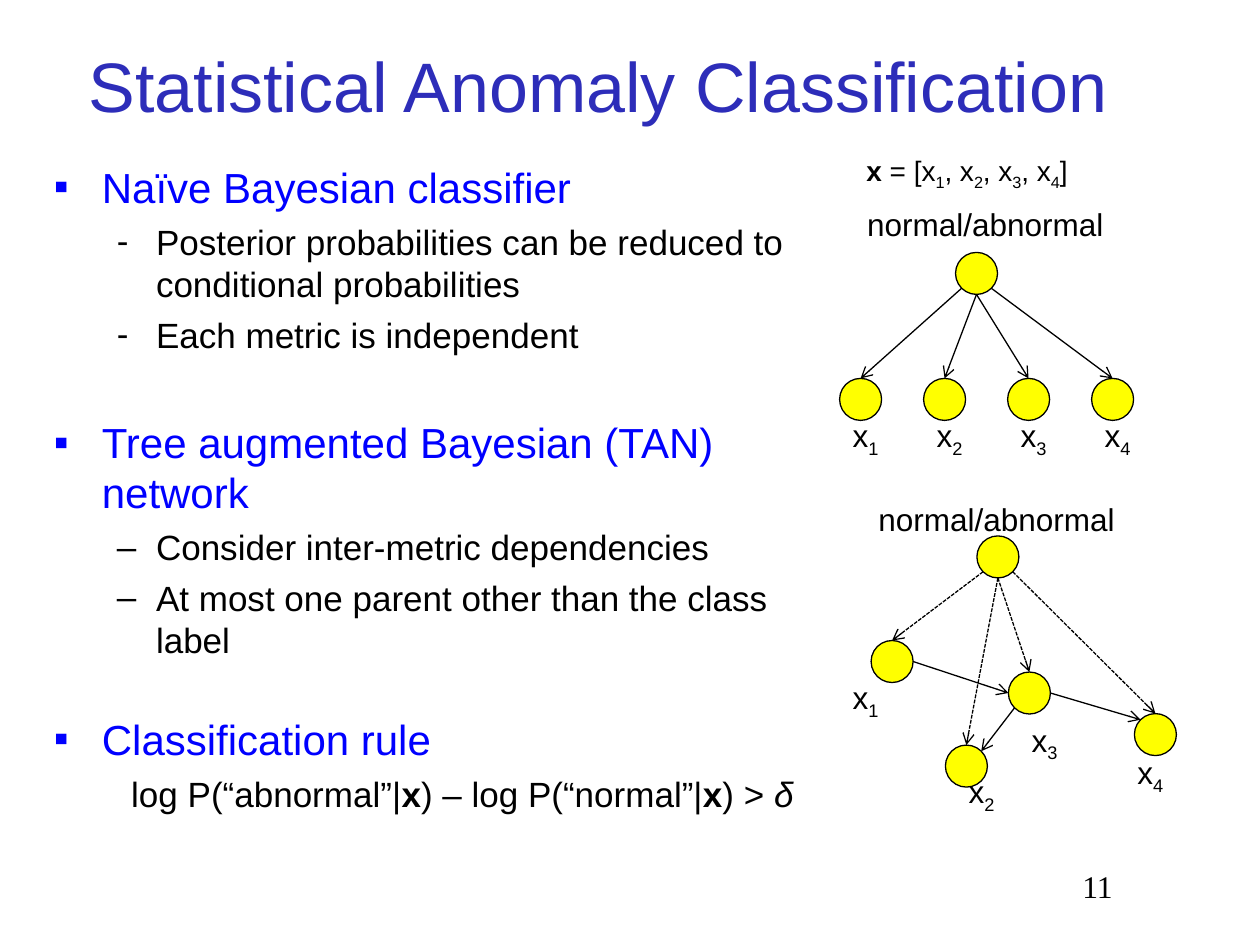
from pptx import Presentation
from pptx.dml.color import RGBColor
from pptx.enum import dml, shapes, text
from pptx.oxml.ns import qn
from pptx.util import Inches, Pt
from lxml import etree

COLORS = {"title": "2D2DB9", "heading": "0000FF", "ink": "000000", "node": "FFFF00"}
RADIUS = 1 / 6
DIAGONAL = 0.5 ** 0.5
PORTS = {
    "top": (0, -1), "bottom": (0, 1), "left": (-1, 0), "right": (1, 0),
    "top left": (-DIAGONAL, -DIAGONAL), "top right": (DIAGONAL, -DIAGONAL),
    "bottom left": (-DIAGONAL, DIAGONAL), "bottom right": (DIAGONAL, DIAGONAL),
}
OUTLINE = [  # level, bullet, wording, points above
    (0, "▪", "Naïve Bayesian classifier", 0),
    (1, "-", "Posterior probabilities can be reduced to conditional probabilities", 5),
    (1, "-", "Each metric is independent", 5),
    (0, "▪", "Tree augmented Bayesian (TAN) network", 35),
    (1, "–", "Consider inter-metric dependencies", 5),
    (1, "–", "At most one parent other than the class label", 5),
    (0, "▪", "Classification rule", 30),
]


def rgb(name):
    return RGBColor.from_string(COLORS[name])


def add_run(paragraph, wording, size, color="ink", font="Arial", style=""):
    """Add one run; style is "", "bold", "italic" or "sub"."""
    run = paragraph.add_run()
    run.text = wording
    run.font.size = Pt(size)
    run.font.name = font
    run.font.color.rgb = rgb(color)
    if style == "bold":
        run.font.bold = True
    elif style == "italic":
        run.font.italic = True
    elif style == "sub":
        run.font._element.set("baseline", "-25000")


def add_frame(slide, left, top, width, height, side_margin=0.1):
    box = slide.shapes.add_textbox(*map(Inches, (left, top, width, height)))
    frame = box.text_frame
    frame.word_wrap = True
    frame.margin_left = frame.margin_right = Inches(side_margin)
    return frame


def set_indent(paragraph, left, first):
    properties = paragraph._p.get_or_add_pPr()
    properties.set("marL", str(Inches(left)))
    properties.set("indent", str(Inches(first)))
    return properties


def add_label(slide, at, runs, size, font="Arial", side_margin=0):
    """Add a centred line of (wording, style) runs."""
    paragraph = add_frame(slide, *at, side_margin).paragraphs[0]
    paragraph.alignment = text.PP_ALIGN.CENTER
    for wording, style in runs:
        add_run(paragraph, wording, size, font=font, style=style)
    return paragraph


def add_title(slide, wording):
    title = slide.shapes.title
    title.left, title.top, title.width, title.height = map(Inches, (0.24, 0.17, 9.01, 1))
    title.text_frame.vertical_anchor = text.MSO_ANCHOR.MIDDLE
    paragraph = title.text_frame.paragraphs[0]
    paragraph.alignment = text.PP_ALIGN.CENTER
    add_run(paragraph, wording, 40, "title")


def add_outline(slide):
    frame = add_frame(slide, 0.33, 0.67, 6.25, 5.42)
    frame.margin_top = Inches(0.61)
    for index, (level, bullet, wording, above) in enumerate(OUTLINE):
        paragraph = frame.add_paragraph() if index else frame.paragraphs[0]
        paragraph.level = level
        paragraph.space_before = Pt(above)
        properties = set_indent(paragraph, *((0.81, -0.31) if level else (0.38, -0.38)))
        etree.SubElement(properties, qn("a:buFont")).set("typeface", "Arial")
        etree.SubElement(properties, qn("a:buChar")).set("char", bullet)
        add_run(paragraph, wording, *((20, "ink") if level else (24, "heading")))


def add_node(slide, center):
    x, y = center
    node = slide.shapes.add_shape(
        shapes.MSO_SHAPE.OVAL, Inches(x - RADIUS), Inches(y - RADIUS),
        Inches(2 * RADIUS), Inches(2 * RADIUS))
    node.shadow.inherit = False
    node.fill.solid()
    node.fill.fore_color.rgb = rgb("node")
    node.line.color.rgb = rgb("ink")
    node.line.width = Pt(0.75)


def add_edge(slide, parent, parent_port, child, child_port, dashed):
    ends = [Inches(coordinate + RADIUS * offset)
            for center, port in ((parent, parent_port), (child, child_port))
            for coordinate, offset in zip(center, PORTS[port])]
    edge = slide.shapes.add_connector(shapes.MSO_CONNECTOR.STRAIGHT, *ends)
    edge.line.color.rgb = rgb("ink")
    edge.line.width = Pt(0.75)
    if dashed:
        edge.line.dash_style = dml.MSO_LINE.SQUARE_DOT
    etree.SubElement(edge.line._get_or_add_ln(), qn("a:tailEnd")).set("type", "arrow")
    etree.SubElement(edge._element.spPr, qn("a:effectLst"))


def add_network(slide, root, metrics, labels, dashed, dependencies=()):
    """Draw the class node, its metric nodes x1 to x4 and the edges between them."""
    for center in (root, *metrics):
        add_node(slide, center)
    root_ports = ("bottom left", "bottom", "bottom", "bottom right")
    for port, metric in zip(root_ports, metrics):
        add_edge(slide, root, port, metric, "top", dashed)
    for parent, parent_port, child, child_port in dependencies:
        add_edge(slide, metrics[parent - 1], parent_port,
                 metrics[child - 1], child_port, False)
    for number, (left, top) in enumerate(labels, 1):
        add_label(slide, (left, top, 0.42, 0.4), [("x", ""), (str(number), "sub")], 18)


def main():
    presentation = Presentation()
    presentation.slide_width, presentation.slide_height = Inches(10), Inches(7.5)
    slide = presentation.slides.add_slide(presentation.slide_layouts[5])

    add_title(slide, "Statistical Anomaly Classification")
    add_outline(slide)

    vector = [("x", "bold"), (" = [x", "")]
    for number in range(1, 5):
        vector += [(str(number), "sub"), (", x" if number < 4 else "]", "")]
    add_label(slide, (5.8, 1.17, 3.75, 0.37), vector, 16)

    for left, top in ((6.74, 1.58), (6.83, 3.92)):
        add_label(slide, (left, top, 2.16, 0.4), [("normal/abnormal", "")], 18)

    columns = [6.83 + 2 / 3 * step for step in range(4)]
    add_network(slide, (7.75, 2.17), [(x, 3.17) for x in columns],
                [(x - 0.17, 3.25) for x in columns], dashed=False)
    add_network(slide, (7.92, 4.42),
                [(7.08, 5.25), (7.67, 6.08), (8.17, 5.5), (9.17, 5.83)],
                [(6.66, 5.33), (7.58, 6.08), (8.08, 5.67), (8.92, 5.93)], dashed=True,
                dependencies=[(1, "right", 3, "left"),
                              (3, "bottom left", 2, "top right"),
                              (3, "right", 4, "top left")])

    rule = add_label(slide, (0.17, 6.08, 6.5, 0.44), [
        ("log P(“abnormal”|", ""), ("x", "bold"), (") – log P(“normal”|", ""),
        ("x", "bold"), (") > ", ""), ("δ", "italic")], 20, side_margin=0.1)
    set_indent(rule, 0.81, -0.31)

    add_label(slide, (7.67, 6.83, 2.08, 0.5), [("11", "")], 18, "Times New Roman")
    presentation.save("out.pptx")


if __name__ == "__main__":
    main()
